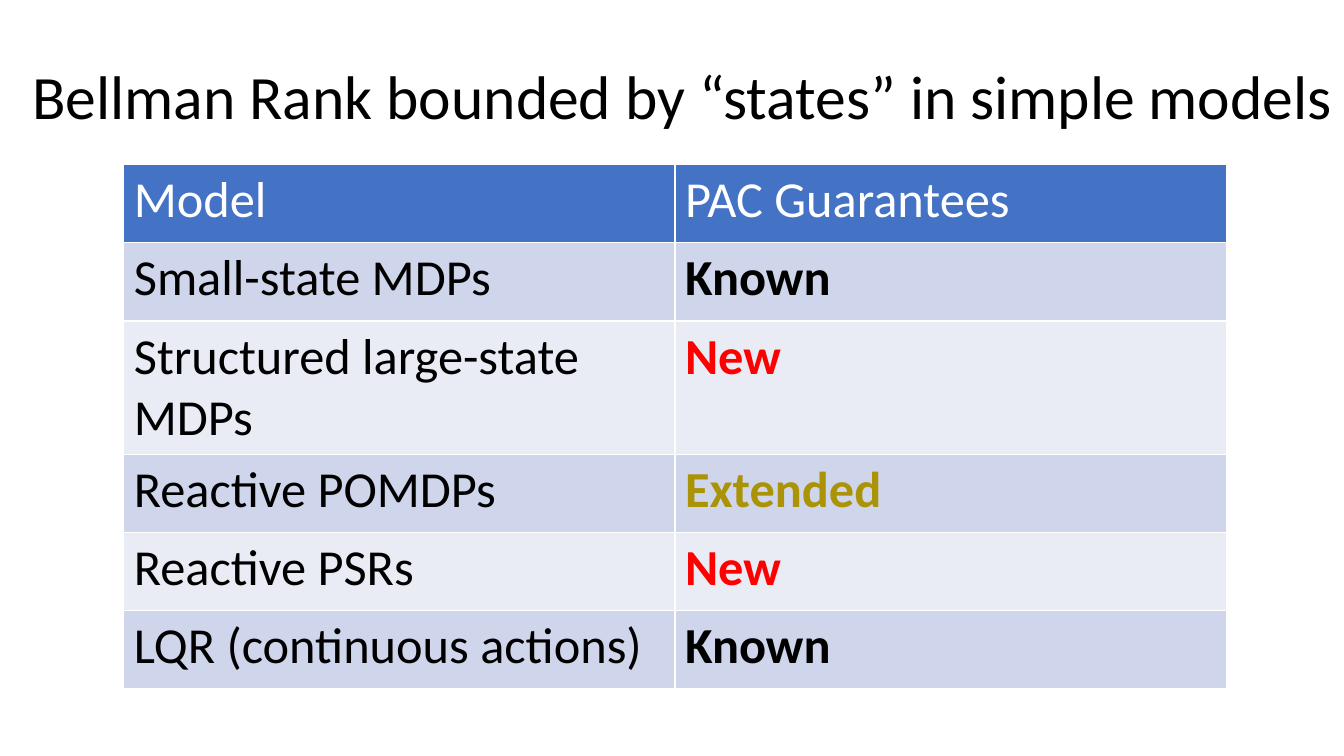
from pptx import Presentation
from pptx.dml.color import RGBColor
from pptx.enum.text import MSO_ANCHOR, MSO_AUTO_SIZE, PP_ALIGN
from pptx.util import Cm, Pt

LEFT = PP_ALIGN.LEFT
MIDDLE = MSO_ANCHOR.MIDDLE
NO_FIT = MSO_AUTO_SIZE.NONE

BLACK = RGBColor(0x00, 0x00, 0x00)
WHITE = RGBColor(0xFF, 0xFF, 0xFF)
RED = RGBColor(0xFF, 0x00, 0x00)
GOLD = RGBColor(0xAA, 0x93, 0x06)
BLUE = RGBColor(0x44, 0x72, 0xC4)
BANDS = [RGBColor(0xE9, 0xEB, 0xF5), RGBColor(0xCF, 0xD5, 0xEA)]

FONT = "Calibri"
TITLE = "Bellman Rank bounded by “states” in simple models"
ROWS = [
    ("Model", "PAC Guarantees"),
    ("Small-state MDPs", "Known"),
    ("Structured large-state MDPs", "New"),
    ("Reactive POMDPs", "Extended"),
    ("Reactive PSRs", "New"),
    ("LQR (continuous actions)", "Known"),
]
TONES = {"Known": BLACK, "New": RED, "Extended": GOLD}
COL_W, ROW_H = 13.89, 1.97


def style(para, size, color, bold=False):
    para.alignment = LEFT
    for run in para.runs:
        font = run.font
        font.name = FONT
        font.size = Pt(size)
        font.bold = bold
        font.color.rgb = color


def add_title(slide):
    title = slide.shapes.title
    title.left, title.top = Cm(0.56), Cm(0.66)
    title.width, title.height = Cm(33.87), Cm(3.68)
    frame = title.text_frame
    frame.text = TITLE
    frame.word_wrap = True
    frame.auto_size = NO_FIT
    frame.vertical_anchor = MIDDLE
    para = frame.paragraphs[0]
    para.line_spacing = 0.9
    style(para, 44, BLACK)


def add_models(slide):
    count, width = len(ROWS), len(ROWS[0])
    table = slide.shapes.add_table(
        count, width, Cm(3.12), Cm(4.15), Cm(COL_W * width), Cm(ROW_H * count)
    ).table
    for col in table.columns:
        col.width = Cm(COL_W)
    for r, row in enumerate(ROWS):
        table.rows[r].height = Cm(ROW_H)
        for c, text in enumerate(row):
            cell = table.cell(r, c)
            cell.text = text
            cell.fill.solid()
            cell.fill.fore_color.rgb = BANDS[r % 2] if r else BLUE
            color = TONES.get(text, BLACK) if r else WHITE
            style(cell.text_frame.paragraphs[0], 36, color, text in TONES)


def main():
    deck = Presentation()
    deck.slide_width, deck.slide_height = Cm(33.87), Cm(19.05)
    slide = deck.slides.add_slide(deck.slide_layouts[5])
    add_title(slide)
    add_models(slide)
    deck.save("out.pptx")


if __name__ == "__main__":
    main()
